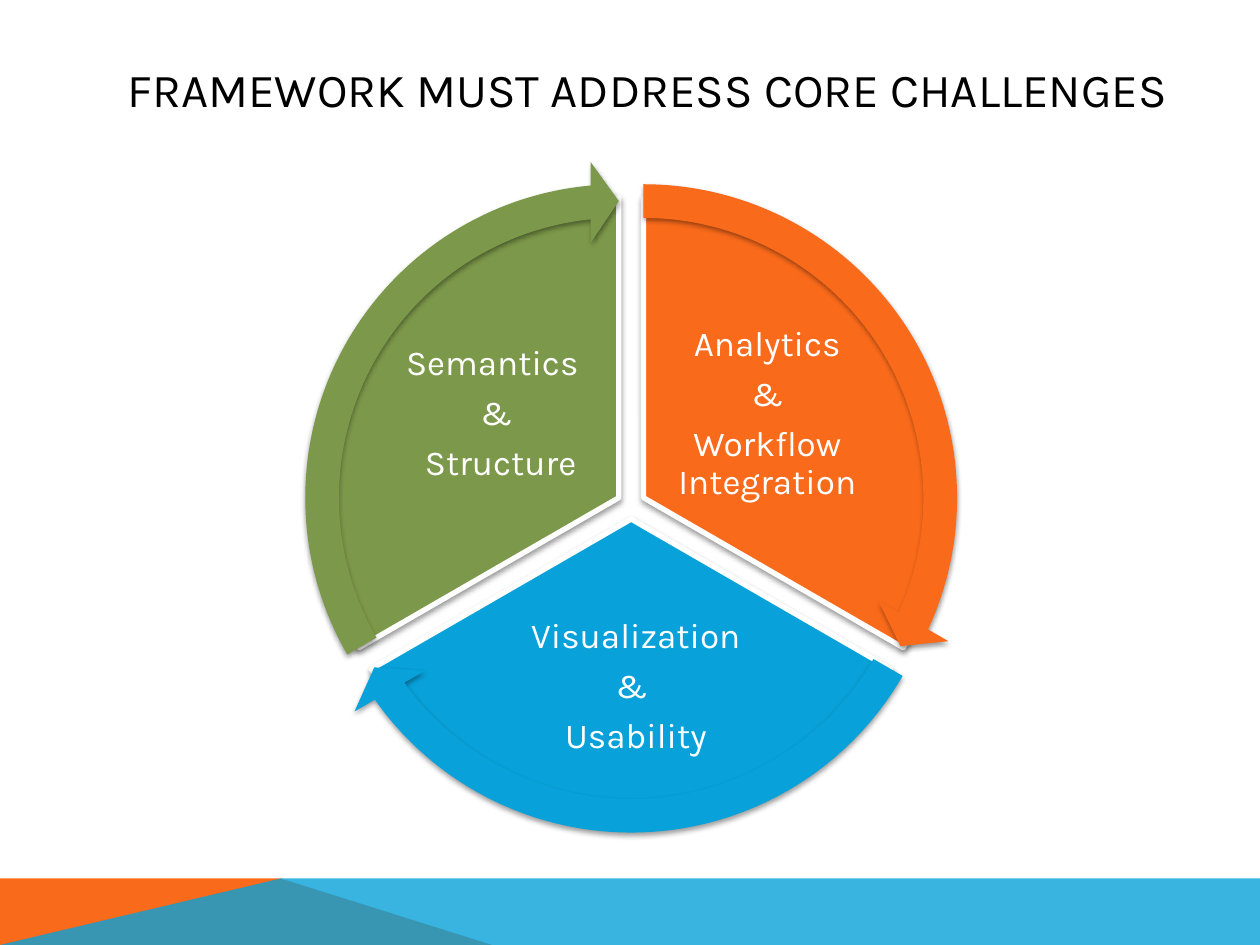
from dataclasses import dataclass

from lxml.etree import SubElement
from pptx import Presentation
from pptx.dml.color import RGBColor as RGB
from pptx.enum.shapes import MSO_SHAPE as SHAPE
from pptx.enum.text import MSO_ANCHOR as ANCHOR, PP_ALIGN as ALIGN
from pptx.oxml.ns import qn
from pptx.util import Cm, Pt


@dataclass(frozen=True)
class Theme:
    font: str = "Karla"
    title: Pt = Pt(27)
    body: Pt = Pt(20)
    black: RGB = RGB(0x00, 0x00, 0x00)
    white: RGB = RGB(0xFF, 0xFF, 0xFF)
    orange: RGB = RGB(0xF9, 0x6A, 0x1B)
    blue: RGB = RGB(0x08, 0xA1, 0xD9)
    green: RGB = RGB(0x7C, 0x98, 0x4A)


def add_text(slide, box, lines, size, color):
    tf = slide.shapes.add_textbox(*map(Cm, box)).text_frame
    tf.word_wrap = True
    tf.vertical_anchor = ANCHOR.MIDDLE
    for i, line in enumerate(lines):
        p = tf.paragraphs[0] if i == 0 else tf.add_paragraph()
        p.text = line
        p.alignment = ALIGN.CENTER
        p.font.name = theme.font
        p.font.size = size
        p.font.color.rgb = color
    return tf


def add_cycle_part(slide, kind, x, y, size, angles, color):
    sp = slide.shapes.add_shape(kind, Cm(x), Cm(y), Cm(size), Cm(size))
    for i, angle in enumerate(angles):
        sp.adjustments[i] = angle
    sp.fill.solid()
    sp.fill.fore_color.rgb = color
    sp.line.fill.background()
    sp.shadow.inherit = False
    effects = sp._element.spPr.find(qn("a:effectLst"))
    shadow = SubElement(effects, qn("a:outerShdw"), blurRad=str(Pt(3.1)),
                        dist=str(Pt(1.6)), dir="5400000", rotWithShape="0")
    black = SubElement(shadow, qn("a:srgbClr"), val=str(theme.black))
    SubElement(black, qn("a:alpha"), val="38000")
    return sp


theme = Theme()
prs = Presentation()
prs.slide_width, prs.slide_height = Cm(25.4), Cm(19.05)
s = prs.slides.add_slide(prs.slide_layouts[6])

BAND_TOP, BOTTOM, PEAK = 17.71, 19.05, 5.66
bands = [
    ([(0, BOTTOM), (0, BAND_TOP), (PEAK, BAND_TOP), (9.92, BOTTOM)], theme.orange, 100),
    ([(0, BOTTOM), (PEAK, BAND_TOP), (25.4, BAND_TOP), (25.4, BOTTOM)], theme.blue, 80),
]
for points, color, opacity in bands:
    start, *rest = [(Cm(x), Cm(y)) for x, y in points]
    builder = s.shapes.build_freeform(*start)
    builder.add_line_segments(rest, close=True)
    sp = builder.convert_to_shape()
    sp.fill.solid()
    sp.fill.fore_color.rgb = color
    sp.line.fill.background()
    sp.shadow.inherit = False
    if opacity < 100:
        clr = sp._element.spPr.find(qn("a:solidFill"))[0]
        SubElement(clr, qn("a:alpha"), val=str(opacity * 1000))

add_text(s, (1.5, 1.02, 23.09, 1.52), ["FRAMEWORK MUST ADDRESS CORE CHALLENGES"],
         theme.title, theme.black)

PIE, ARROW = 12.09, 13.59
OVERHANG = (ARROW - PIE) / 2
sectors = [
    (6.93, 3.99, theme.orange, (162, 18), (14.73, 161.99),
     (13.31, 6.55, 4.32, 3.61), ["Analytics", "&", "Workflow Integration"]),
    (6.68, 4.42, theme.blue, (18, 90), (86.72, 18.01),
     (9.58, 12.27, 6.48, 3.18), ["Visualization", "& ", "Usability"]),
    (6.43, 3.99, theme.green, (90, 162), (158.73, 90),
     (7.85, 6.55, 4.32, 3.61), ["Semantics ", "&", " Structure"]),
]
for x, y, color, pie_angles, _, box, lines in sectors:
    sp = add_cycle_part(s, SHAPE.PIE, x, y, PIE, pie_angles, color)
    sp.line.color.rgb = theme.white
    sp.line.width = Pt(3)
    tf = add_text(s, box, lines, theme.body, theme.white)
    tf.margin_left = tf.margin_right = tf.margin_top = tf.margin_bottom = Cm(0.07)
    for p in tf.paragraphs:
        p.line_spacing = 0.9
        p.space_after = Pt(7)

for x, y, color, _, (end, begin), *_ in sectors:
    add_cycle_part(s, SHAPE.CIRCULAR_ARROW, x - OVERHANG, y - OVERHANG, ARROW,
                   (0.05, 3.28, end, begin, 0.06), color)

prs.save("out.pptx")
